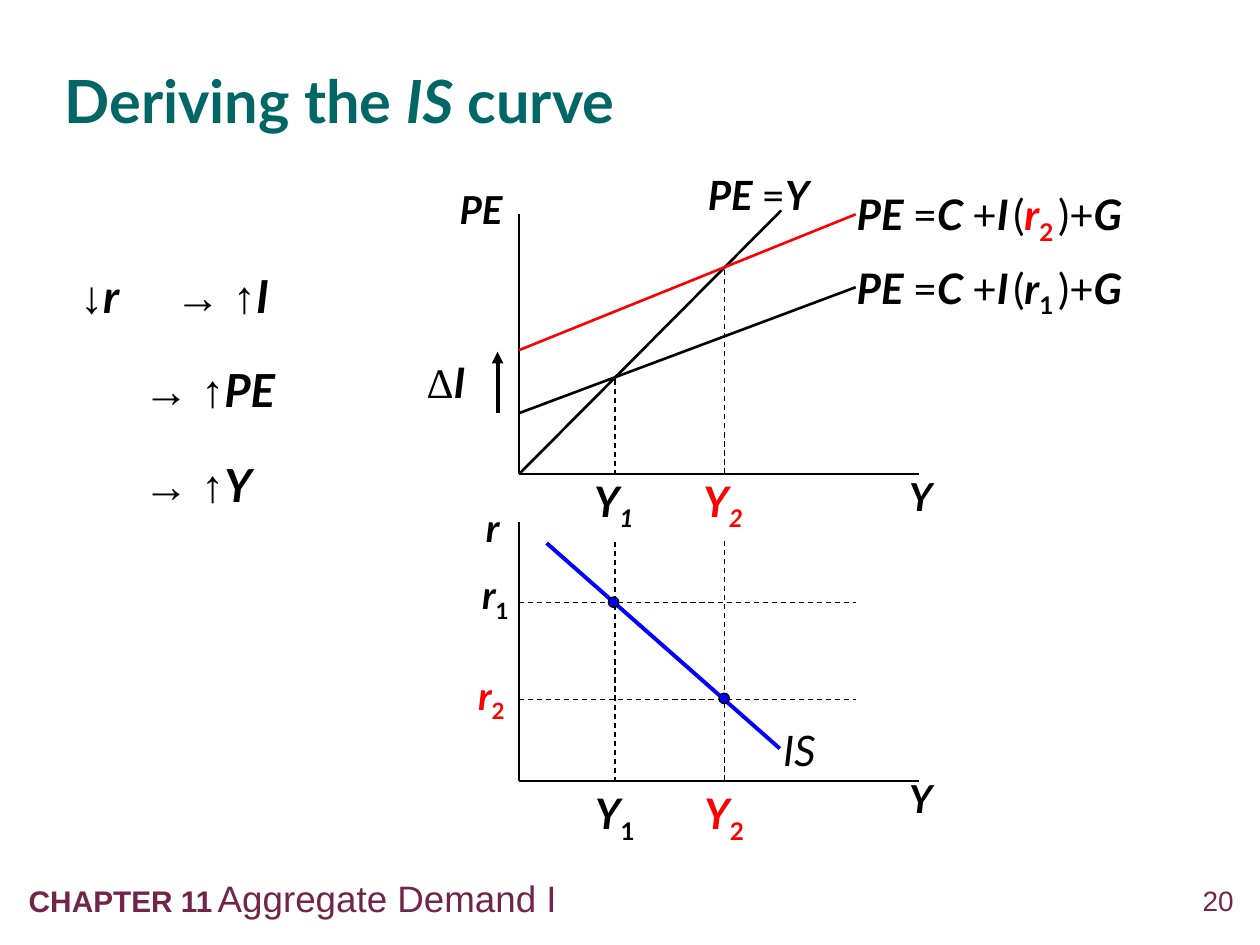
from dataclasses import dataclass
from functools import partial
from typing import Optional

from lxml.etree import SubElement
from pptx import Presentation
from pptx.dml.color import RGBColor
from pptx.enum.dml import MSO_LINE
from pptx.enum.shapes import MSO_CONNECTOR, MSO_SHAPE
from pptx.enum.text import MSO_ANCHOR, MSO_AUTO_SIZE, PP_ALIGN
from pptx.oxml.ns import qn
from pptx.util import Cm, Pt

COLORS = {"black": "000000", "red": "FF0000", "blue": "0000FF",
          "white": "FFFFFF", "teal": "006666", "plum": "71254B"}


@dataclass(frozen=True)
class Span:
    text: str
    bold: bool = False
    italic: bool = False
    size: Optional[float] = None
    color: Optional[str] = None
    font: str = "Lato"
    subscript: bool = False


@dataclass(frozen=True)
class Label:
    left: float
    top: float
    width: float
    height: float
    spans: tuple
    size: float = 24
    color: str = "black"
    align: PP_ALIGN = PP_ALIGN.LEFT
    insets: tuple = (0.25, 0.13, 0.25, 0.13)
    opacity: int = 0
    line_spacing: Optional[float] = None
    tab: Optional[float] = None
    hanging: float = 0
    anchor: MSO_ANCHOR = MSO_ANCHOR.TOP


@dataclass(frozen=True)
class Line:
    start: tuple
    end: tuple
    color: str = "black"
    width: float = 1
    dashed: bool = False
    arrow: bool = False


variable = partial(Span, bold=True, italic=True)
index = partial(Span, bold=True, subscript=True)
arial = partial(Span, font="Arial")


def rgb(name: str) -> RGBColor:
    return RGBColor.from_string(COLORS[name])


def add_span(para, text: str, *, size: float, color: str, font: str,
             bold: bool, italic: bool, subscript: bool) -> None:
    span = para.add_run()
    span.text = text
    span.font.size, span.font.name = Pt(size), font
    span.font.bold, span.font.italic = bold, italic
    span.font.color.rgb = rgb(color)
    if subscript:
        span.font._element.set("baseline", "-25000")


def write_label(box, label: Label) -> None:
    box.left, box.top = Cm(label.left), Cm(label.top)
    box.width, box.height = Cm(label.width), Cm(label.height)
    frame = box.text_frame
    frame.word_wrap = True
    frame.auto_size = MSO_AUTO_SIZE.NONE
    frame.vertical_anchor = label.anchor
    (frame.margin_left, frame.margin_top,
     frame.margin_right, frame.margin_bottom) = map(Cm, label.insets)
    if label.opacity:
        box.fill.solid()
        box.fill.fore_color.rgb = rgb("white")
        if label.opacity < 100:
            color = box.fill._xPr.find(qn("a:solidFill"))[0]
            SubElement(color, qn("a:alpha")).set("val", str(label.opacity * 1000))
    para = frame.paragraphs[0]
    para.alignment = label.align
    para.space_before = Pt(0)
    if label.line_spacing:
        para.line_spacing = label.line_spacing
    if label.tab:
        properties = para._p.get_or_add_pPr()
        properties.set("marL", str(Cm(label.hanging)))
        properties.set("indent", str(-Cm(label.hanging)))
        SubElement(properties, qn("a:buNone"))
        stops = SubElement(properties, qn("a:tabLst"))
        stop = SubElement(stops, qn("a:tab"))
        stop.set("pos", str(Cm(label.tab)))
        stop.set("algn", "l")
    for span in label.spans:
        add_span(para, span.text, size=span.size or label.size,
                 color=span.color or label.color, font=span.font,
                 bold=span.bold, italic=span.italic, subscript=span.subscript)


def add_label(page, label: Label) -> None:
    write_label(page.shapes.add_textbox(0, 0, Cm(1), Cm(1)), label)


def add_line(page, line: Line) -> None:
    connector = page.shapes.add_connector(
        MSO_CONNECTOR.STRAIGHT, *map(Cm, line.start + line.end))
    connector.line.color.rgb = rgb(line.color)
    connector.line.width = Pt(line.width)
    if line.dashed:
        connector.line.dash_style = MSO_LINE.DASH
    if line.arrow:
        SubElement(connector.line._get_or_add_ln(), qn("a:tailEnd")).set("type", "triangle")
    SubElement(connector._element.spPr, qn("a:effectLst"))


def add_dot(page, x: float, y: float, size: float = 0.21) -> None:
    dot = page.shapes.add_shape(MSO_SHAPE.OVAL, Cm(x - size / 2), Cm(y - size / 2),
                                Cm(size), Cm(size))
    dot.shadow.inherit = False
    dot.fill.solid()
    dot.fill.fore_color.rgb = rgb("blue")
    dot.line.color.rgb = rgb("black")
    dot.line.width = Pt(0.75)


def expenditure(top: float, number: str, color: str) -> Label:
    thin = variable(" ", size=12)
    return Label(17.02, top, 7.19, 1.27, (
        variable("PE "), Span("="), variable("C "), Span("+"), variable("I"), thin,
        Span("("), variable("r", color=color), index(number, color=color), thin,
        Span(")+"), variable("G")))


def step(top: float, height: float, *spans: Span, hanging: float = 0) -> Label:
    return Label(1.37, top, 5.72, height, spans, size=26, opacity=50,
                 line_spacing=1.1, tab=1.93, hanging=hanging)


def main() -> None:
    deck = Presentation()
    deck.slide_width, deck.slide_height = Cm(25.4), Cm(19.05)
    page = deck.slides.add_slide(deck.slide_layouts[1])
    axis_x, axis_end, line_end = 10.46, 18.52, 17.25
    arrows = arial("→ ↑")

    # Title and first step of the reasoning
    write_label(page.shapes.title, Label(
        1.3, 0.66, 22.91, 2.62,
        (Span("Deriving the ", bold=True), variable("IS"), Span(" curve", bold=True)),
        size=34, color="teal", insets=(0, 0, 0, 0), line_spacing=1.05,
        anchor=MSO_ANCHOR.MIDDLE))
    write_label(page.placeholders[1], step(
        5.16, 1.91, arial("↓"), variable("r\t"), arrows, variable("I"), hanging=0.64))

    # Footer
    add_label(page, Label(23.47, 17.81, 1.4, 0.81, (arial("20"),), size=16, color="plum",
                          align=PP_ALIGN.RIGHT, insets=(0, 0, 0, 0)))
    add_label(page, Label(0.33, 17.53, 20.78, 1.14, (
        arial("CHAPTER 11\t", bold=True, size=17), arial("Aggregate Demand I")),
        size=21, color="plum", tab=4.37))

    # Output levels: the white upper labels interrupt the dashed lines
    for number, x, top, color in (("2", 14.6, 5.44, "red"), ("1", 12.4, 7.65, "black")):
        add_label(page, Label(x - 0.53, 15.75, 1.27, 1.4, (variable("Y"), index(number)),
                              color=color, insets=(0.13, 0.13, 0.13, 0.25), opacity=100))
        add_line(page, Line((x, top), (x, 15.75), width=0.75, dashed=True))
        add_label(page, Label(x - 0.55, 9.58, 1.27, 1.27,
                              (variable("Y"), index(number, italic=True)),
                              color=color, insets=(0.13, 0, 0.13, 0.25), opacity=100))

    # Axes of both graphs
    for top, bottom, name_top in ((4.32, 9.55, 9.4), (10.52, 15.75, 15.49)):
        add_line(page, Line((axis_x, top), (axis_x, bottom)))
        add_line(page, Line((axis_x, bottom), (axis_end, bottom)))
        add_label(page, Label(18.08, name_top, 1.47, 1.19, (variable("Y"),), size=22))

    # Curves, interest rate levels and the shift arrow
    for line in (
        Line((10.49, 9.53), (15.75, 4.24), width=1.5),
        Line((axis_x, 8.33), (line_end, 5.79), width=1.5),
        Line((axis_x, 7.06), (line_end, 4.32), "red", 1.5),
        Line((axis_x, 12.14), (line_end, 12.14), width=0.75, dashed=True),
        Line((axis_x, 14.1), (line_end, 14.1), width=0.75, dashed=True),
        Line((11.02, 10.95), (15.72, 15.09), "blue", 2.25),
        Line((10.03, 8.33), (10.03, 7.09), width=2.25, arrow=True),
    ):
        add_line(page, line)

    # Graph labels and remaining steps
    centered = partial(Label, align=PP_ALIGN.CENTER)
    for label in (
        centered(8.94, 3.63, 1.52, 1.19, (variable("PE"),), size=22),
        centered(9.4, 10.03, 1.07, 1.19, (variable("r"),), size=22),
        centered(9.35, 11.38, 1.27, 1.19, (variable("r"), index("1")), size=22),
        centered(9.27, 13.41, 1.27, 1.19, (variable("r"), index("2")), size=22, color="red"),
        centered(8.15, 7.06, 1.68, 1.27, (Span("Δ", font="Times New Roman"), variable("I"))),
        Label(14.02, 3.3, 3.3, 1.24, (variable("PE "), Span("="), variable("Y")), size=23),
        Label(15.54, 14.48, 1.47, 1.27, (Span("IS", italic=True),)),
        expenditure(5.16, "1", "black"),
        expenditure(3.68, "2", "red"),
        step(7.06, 2.34, Span("\t"), arrows, variable("PE")),
        step(8.97, 2.11, Span("\t"), arrows, variable("Y")),
    ):
        add_label(page, label)

    # Equilibrium points
    add_dot(page, 12.37, 12.14)
    add_dot(page, 14.6, 14.08)

    deck.save("out.pptx")


if __name__ == "__main__":
    main()
